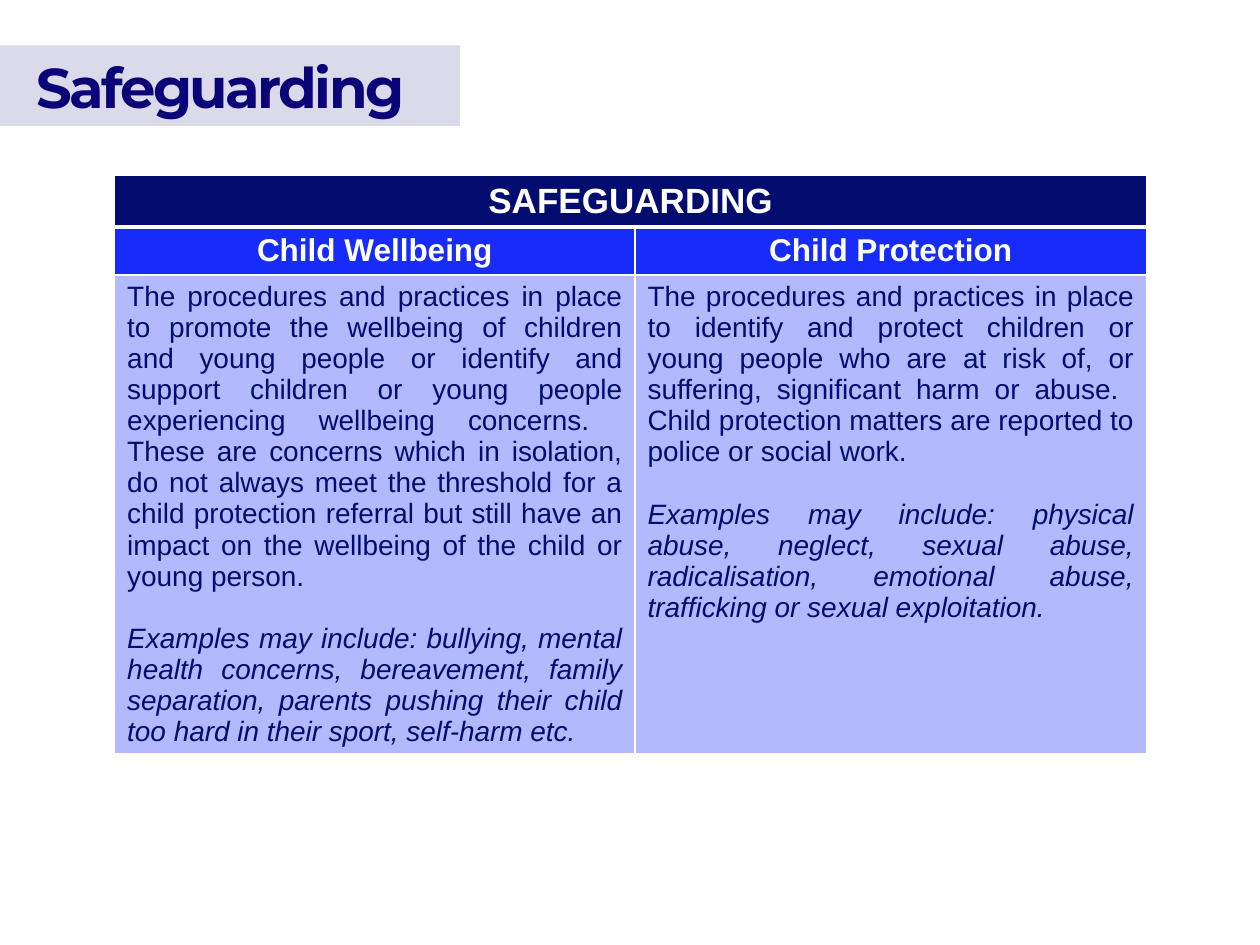
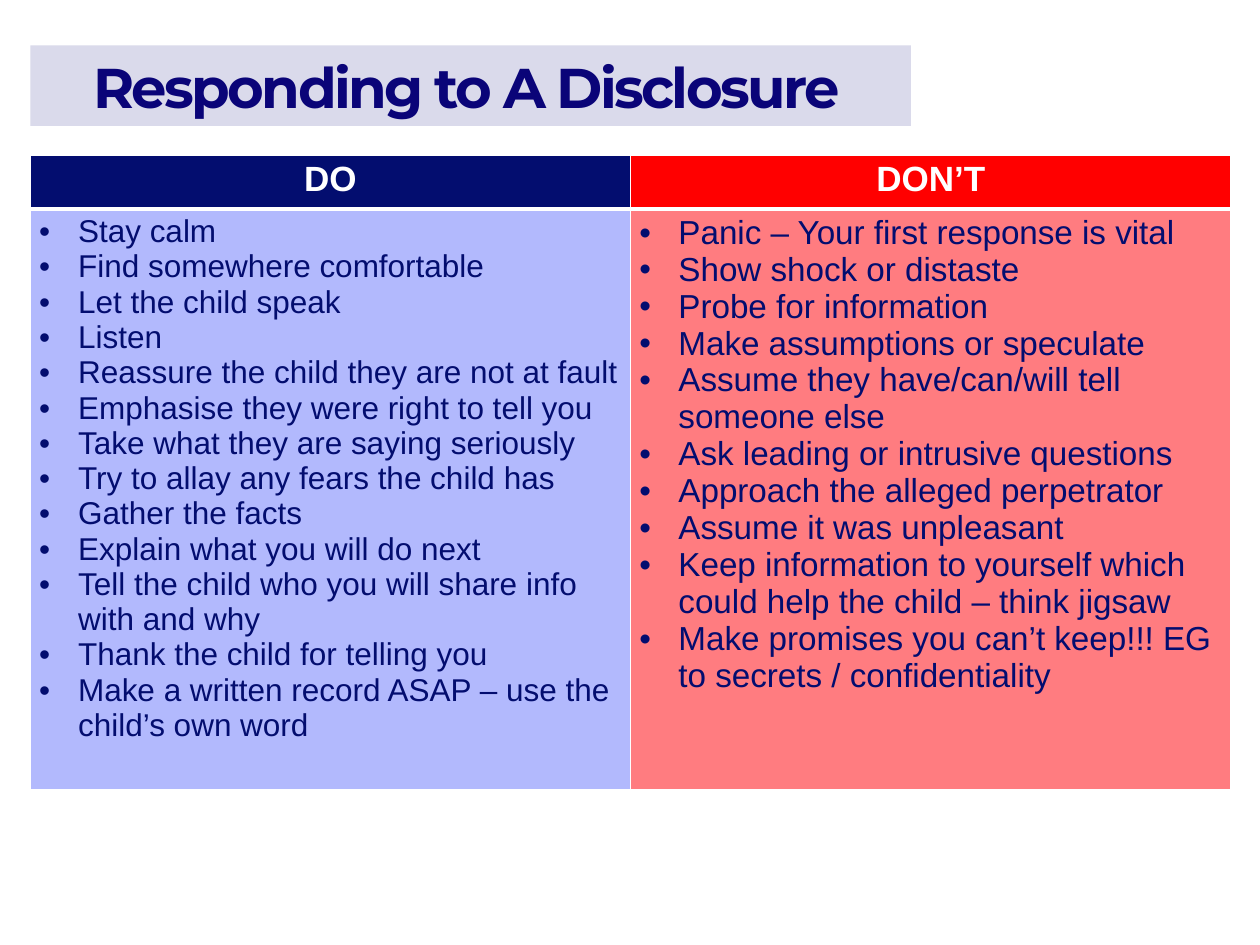
from lxml.etree import SubElement
from pptx import Presentation
from pptx.dml.color import RGBColor
from pptx.enum.shapes import MSO_SHAPE
from pptx.enum.text import MSO_ANCHOR, PP_ALIGN
from pptx.oxml.ns import qn
from pptx.util import Inches, Pt

COLOURS = {
    "white": "FFFFFF",
    "title": "0A0478",
    "band": "DADAEB",
    "navy": "030D6F",
    "blue": "182CF9",
    "pale_blue": "B2B9FD",
    "red": "FF0000",
    "pale_red": "FF7C80",
}
COLUMNS, ROWS = 100, 75
UNIT = Inches(0.1)
BAND_TOP, BAND_HEIGHT = 3.6, 6.4
PARAGRAPH_GAP = 17.9

WELLBEING = [
    "The procedures and practices in place to promote the wellbeing of children and young "
    "people or identify and support children or young people experiencing wellbeing concerns.  "
    "These are concerns which in isolation, do not always meet the threshold for a child "
    "protection referral but still have an impact on the wellbeing of the child or young person.",
    "Examples may include: bullying, mental health concerns, bereavement, family separation, "
    "parents pushing their child too hard in their sport, self-harm etc.",
]
PROTECTION = [
    "The procedures and practices in place to identify and protect children or young people "
    "who are at risk of, or suffering, significant harm or abuse.  Child protection matters "
    "are reported to police or social work.",
    "Examples may include: physical abuse, neglect, sexual abuse, radicalisation, emotional "
    "abuse, trafficking or sexual exploitation.",
]
DO = [
    "Stay calm",
    "Find somewhere comfortable",
    "Let the child speak",
    "Listen",
    "Reassure the child they are not at fault",
    "Emphasise they were right to tell you",
    "Take what they are saying seriously",
    "Try to allay any fears the child has",
    "Gather the facts",
    "Explain what you will do next",
    "Tell the child who you will share info with and why",
    "Thank the child for telling you",
    "Make a written record ASAP – use the child’s own word",
]
DONT = [
    "Panic – Your first response is vital",
    "Show shock or distaste",
    "Probe for information",
    "Make assumptions or speculate",
    "Assume they have/can/will tell someone else",
    "Ask leading or intrusive questions",
    "Approach the alleged perpetrator",
    "Assume it was unpleasant",
    "Keep information to yourself which could help the child – think jigsaw",
    "Make promises you can’t keep!!! EG to secrets / confidentiality",
]


def units(count):
    return int(count * UNIT)


def colour(name):
    return RGBColor.from_string(COLOURS[name])


def style(para, size, colour_name, font="Arial", bold=False, italic=False):
    for span in para.runs:
        span.font.name = font
        span.font.size = Pt(size)
        span.font.bold = bold
        span.font.italic = italic
        span.font.color.rgb = colour(colour_name)


def add_title(page, text, left, width, indent):
    band = page.shapes.add_shape(
        MSO_SHAPE.RECTANGLE, units(left), units(BAND_TOP), units(width), units(BAND_HEIGHT))
    band.shadow.inherit = False
    band.fill.solid()
    band.fill.fore_color.rgb = colour("band")
    band.line.fill.background()
    frame = band.text_frame
    frame.word_wrap = True
    frame.vertical_anchor = MSO_ANCHOR.MIDDLE
    frame.margin_left, frame.margin_right = units(indent), 0
    frame.text = text
    para = frame.paragraphs[0]
    para.alignment = PP_ALIGN.LEFT
    style(para, 32, "title", "Montserrat", bold=True)
    para.runs[0].font._element.set("spc", "-150")


def add_border(cell, side, width):
    line = SubElement(cell._tc.get_or_add_tcPr(), qn(f"a:ln{side}"), w=str(Pt(width)))
    fill = SubElement(line, qn("a:solidFill"))
    SubElement(fill, qn("a:srgbClr"), val=COLOURS["white"])


def add_table(page, left, top, widths, heights, margins):
    frame = page.shapes.add_table(
        len(heights), len(widths), units(left), units(top),
        units(sum(widths)), units(sum(heights)))
    table = frame.table
    for column, width in zip(table.columns, widths):
        column.width = units(width)
    for row_index, (row, height) in enumerate(zip(table.rows, heights)):
        row.height = units(height)
        for cell in row.cells:
            cell.margin_left = cell.margin_right = units(margins[0])
            cell.margin_top = cell.margin_bottom = units(margins[1])
            add_border(cell, "L", 1)
            add_border(cell, "R", 1)
            add_border(cell, "T", 3 if row_index == 1 else 1)
            add_border(cell, "B", 3 if row_index == 0 else 1)
    return table


def fill_cell(cell, fill):
    cell.fill.solid()
    cell.fill.fore_color.rgb = colour(fill)


def write_heading(cell, text, size, fill):
    fill_cell(cell, fill)
    cell.text_frame.text = text
    para = cell.text_frame.paragraphs[0]
    para.alignment = PP_ALIGN.CENTER
    style(para, size, "white", bold=True)


def write_definition(cell, texts):
    fill_cell(cell, "pale_blue")
    cell.text_frame.text = "\n".join(texts)
    for index, para in enumerate(cell.text_frame.paragraphs):
        para.alignment = PP_ALIGN.JUSTIFY
        if index:
            para.space_before = Pt(PARAGRAPH_GAP)
        style(para, 16, "navy", italic=index > 0)


def write_bullets(cell, texts, size, fill):
    fill_cell(cell, fill)
    cell.text_frame.text = "\n".join(texts)
    indent = units(3.1)
    for para in cell.text_frame.paragraphs:
        properties = para._p.get_or_add_pPr()
        properties.set("marL", str(indent))
        properties.set("indent", str(-indent))
        SubElement(properties, qn("a:buFont"), typeface="Arial")
        SubElement(properties, qn("a:buChar"), char="•")
        style(para, size, "navy")


def build_safeguarding(page):
    add_title(page, "Safeguarding", 0, 36.5, 2.9)
    table = add_table(page, 9.1, 13.9, [41.3, 40.6], [4, 3.8, 38], (1, 0.5))
    table.cell(0, 0).merge(table.cell(0, 1))
    write_heading(table.cell(0, 0), "SAFEGUARDING", 20, "navy")
    topics = [("Child Wellbeing", WELLBEING), ("Child Protection", PROTECTION)]
    for column, (heading, texts) in enumerate(topics):
        write_heading(table.cell(1, column), heading, 18, "blue")
        write_definition(table.cell(2, column), texts)


def build_disclosure(page):
    add_title(page, "Responding to A Disclosure", 2.4, 69.9, 5)
    table = add_table(page, 2.4, 12.3, [47.65, 47.65], [4.3, 46.1], (0.7, 0.4))
    advice = [("DO", "navy", DO, 18, "pale_blue"), ("DON’T", "red", DONT, 19, "pale_red")]
    for column, (heading, heading_fill, texts, size, fill) in enumerate(advice):
        write_heading(table.cell(0, column), heading, 20, heading_fill)
        write_bullets(table.cell(1, column), texts, size, fill)


def main():
    deck = Presentation()
    deck.slide_width, deck.slide_height = units(COLUMNS), units(ROWS)
    for build in (build_safeguarding, build_disclosure):
        build(deck.slides.add_slide(deck.slide_layouts[6]))
    deck.save("out.pptx")


if __name__ == "__main__":
    main()
